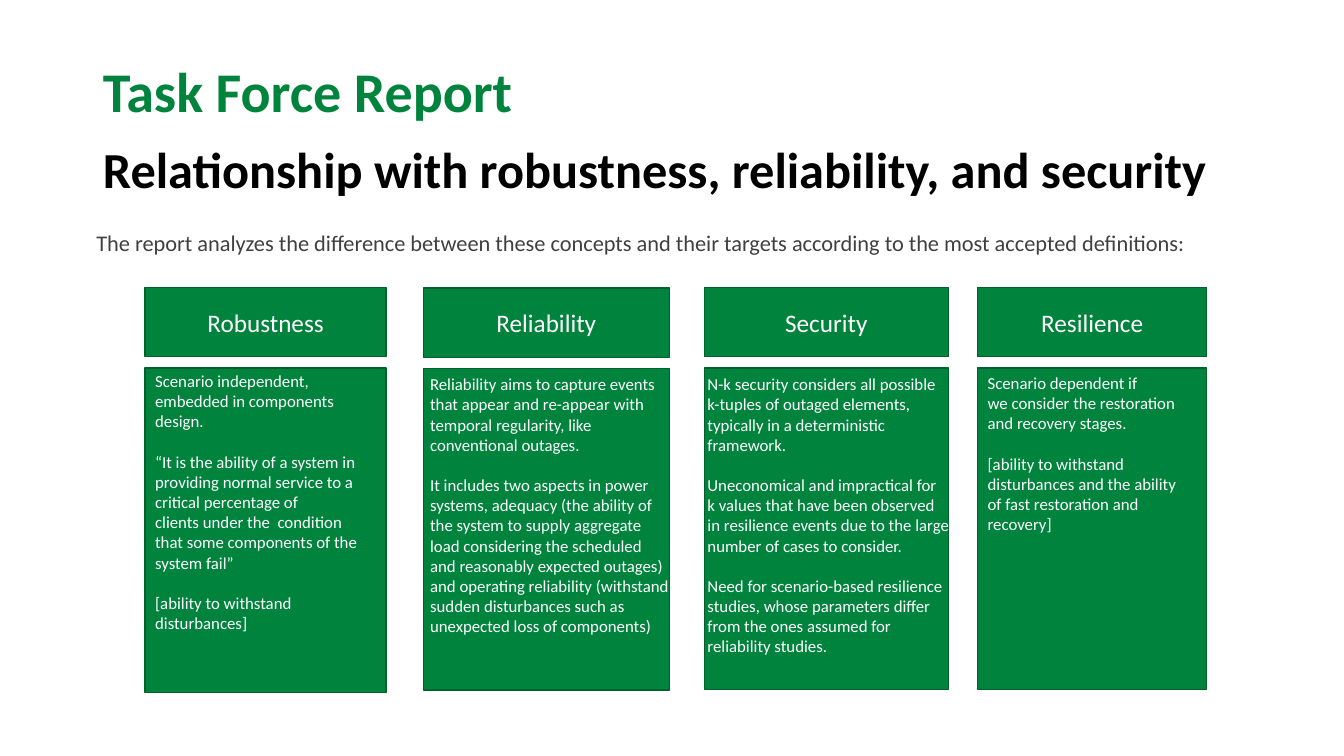
"""Build the Task Force Report slide with four columns of concepts."""
from lxml.etree import SubElement as Sub
from pptx import Presentation as Deck
from pptx.dml.color import RGBColor as Rgb
from pptx.enum.shapes import MSO_SHAPE as Shape
from pptx.enum.text import MSO_ANCHOR as Anchor, MSO_AUTO_SIZE as Fit, PP_ALIGN as Align
from pptx.oxml.ns import qn
from pptx.util import Cm, Pt

HUES = {"title": "00843D", "fill": "00833C", "edge": "00612C",
        "black": "000000", "grey": "404040", "white": "FFFFFF"}


def write(shape, *texts, size, hue, bold=False, align=Align.LEFT,
          anchor=Anchor.TOP, gap=0, plain=False):
    """Fill a shape with one paragraph per text."""
    frame = shape.text_frame
    frame.word_wrap = True
    frame.auto_size = Fit.NONE
    frame.vertical_anchor = anchor
    for i, text in enumerate(texts):
        para = frame.add_paragraph() if i else frame.paragraphs[0]
        para.text = text
        para.alignment = align
        para.space_before = Pt(gap if i else 0)
        if plain:
            props = para._p.get_or_add_pPr()
            props.set("marL", "0")
            props.set("indent", "0")
            Sub(props, qn("a:buNone"))
        for run in para.runs:
            font = run.font
            font.name, font.size, font.bold = "Calibri", Pt(size), bold
            font.color.rgb = Rgb.from_string(HUES[hue])


def place(shape, left, top, width, height):
    """Move and size a shape in centimetres."""
    shape.left, shape.top = Cm(left), Cm(top)
    shape.width, shape.height = Cm(width), Cm(height)


deck = Deck()
deck.slide_width, deck.slide_height = Cm(33.87), Cm(19.05)
slide = deck.slides.add_slide(deck.slide_layouts[1])

title, body = slide.placeholders
place(title, 2.34, 1.3, 20.96, 1.85)
write(title, "Task Force Report", size=40, hue="title", bold=True)
place(body, 2.34, 3.35, 29.21, 1.85)
write(body, "Relationship with robustness, reliability, and security",
      size=36, hue="black", bold=True, plain=True)

intro = slide.shapes.add_textbox(Cm(2.18), Cm(5.64), Cm(29.36), Cm(3.53))
write(intro, "The report analyzes the difference between these concepts and "
      "their targets according to the most accepted definitions:",
      size=16, hue="grey")

# name, (left, top, width, body height), text box, texts
COLUMNS = [
    ("Robustness", (3.66, 7.24, 6.07, 8.18), (3.66, 9.22, 5.97, 8.46), [
        "Scenario independent, embedded in components design.",
        "“It is the ability of a system in providing normal service to a\v"
        "critical percentage of\v"
        "clients under the  condition that some components of the\vsystem fail”",
        "[ability to withstand disturbances]"]),
    ("Reliability", (10.67, 7.26, 6.2, 8.1), (10.59, 9.3, 6.55, 8.46), [
        "Reliability aims to capture events that appear and re-appear with "
        "temporal regularity, like conventional outages.",
        "It includes two aspects in power systems, adequacy (the ability of the "
        "system to supply aggregate load considering the scheduled and "
        "reasonably expected outages) and operating reliability (withstand "
        "sudden disturbances such as unexpected loss of components)"]),
    ("Security", (17.75, 7.24, 6.15, 8.1), (17.58, 9.3, 6.63, 6.58), [
        "N-k security considers all possible k-tuples of outaged elements, "
        "typically in a deterministic framework.",
        "Uneconomical and impractical for\vk values that have been observed in "
        "resilience events due to the large number of cases to consider.",
        "Need for scenario-based resilience studies, whose parameters differ "
        "from the ones assumed for reliability studies."]),
    ("Resilience", (24.64, 7.24, 5.77, 8.1), (24.64, 9.27, 5.54, 8.46), [
        "Scenario dependent if\vwe consider the restoration\v"
        "and recovery stages.",
        "[ability to withstand\vdisturbances and the ability of fast "
        "restoration and recovery]"]),
]

for name, (left, top, width, tall), area, texts in COLUMNS:
    group = slide.shapes.add_group_shape().shapes
    for label, y, height in ((name, top, 1.75), ("", top + 2.03, tall)):
        box = group.add_shape(Shape.RECTANGLE, Cm(left), Cm(y), Cm(width), Cm(height))
        box.shadow.inherit = False
        box.fill.solid()
        box.fill.fore_color.rgb = Rgb.from_string(HUES["fill"])
        box.line.color.rgb = Rgb.from_string(HUES["edge"])
        box.line.width = Pt(1)
        if label:
            write(box, label, size=18, hue="white", align=Align.CENTER,
                  anchor=Anchor.MIDDLE)
    note = group.add_textbox(*map(Cm, area))
    write(note, *texts, size=12, hue="white", gap=14.4)

deck.save("out.pptx")
